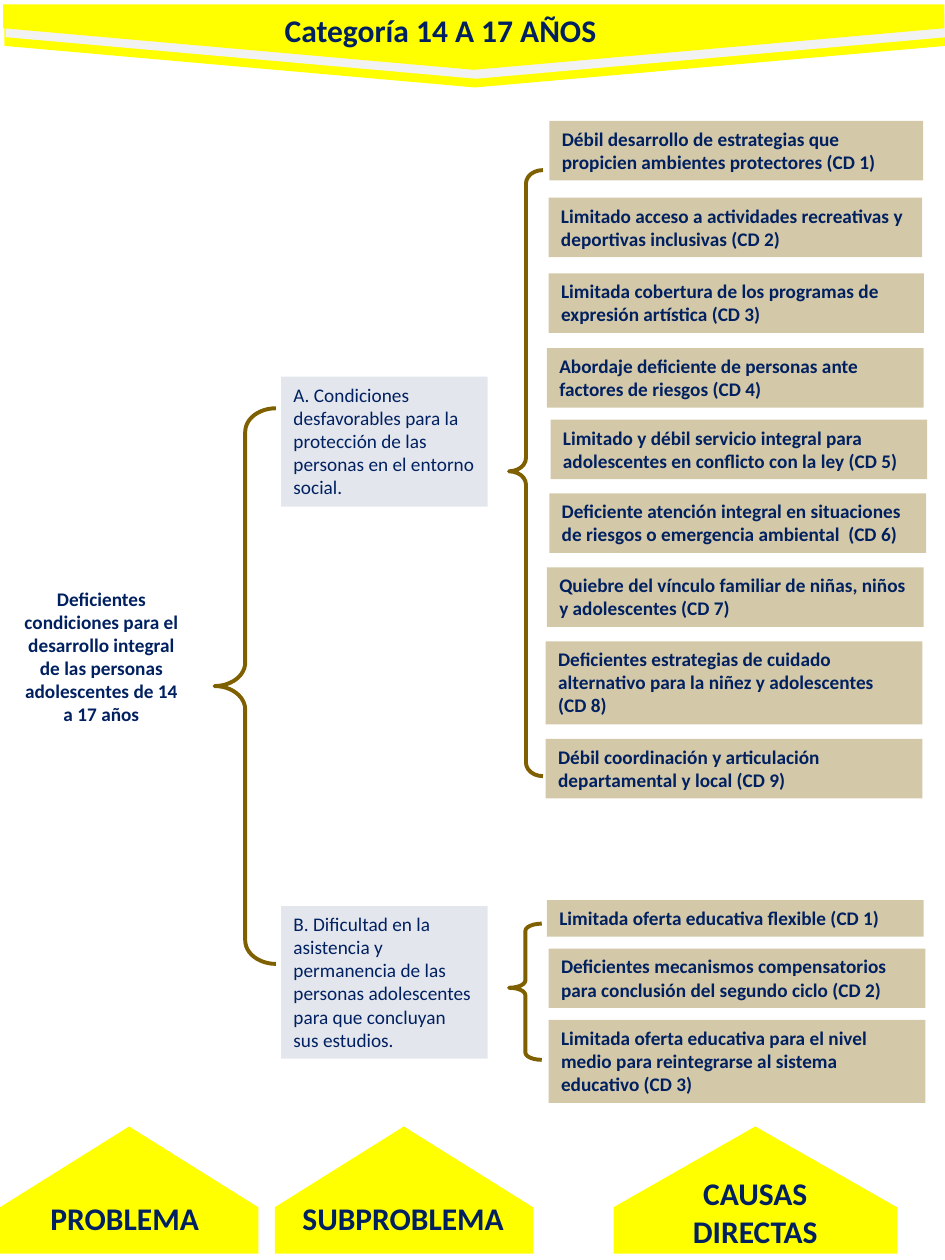
from lxml.etree import SubElement
from pptx import Presentation
from pptx.dml.color import RGBColor
from pptx.enum.shapes import MSO_SHAPE
from pptx.enum.text import MSO_ANCHOR, MSO_AUTO_SIZE, PP_ALIGN
from pptx.oxml.ns import qn
from pptx.util import Pt

COLORS = {"navy": "002060", "brown": "7F6000", "yellow": "FFFF00", "light": "F2F2F2"}

# left, top, width, height, text
CAUSES = [
    (314, 69.1, 213.5, 34, "Débil desarrollo de estrategias que propicien ambientes protectores (CD 1)"),
    (313.5, 113, 213.5, 34, "Limitado acceso a actividades recreativas y deportivas inclusivas (CD 2)"),
    (313.5, 156.2, 214.5, 34, "Limitada cobertura de los programas de expresión artística (CD 3)"),
    (312.5, 199, 215.3, 34, "Abordaje deficiente de personas ante factores de riesgos (CD 4)"),
    (314.6, 239.8, 215.3, 34, "Limitado y débil servicio integral para adolescentes en conflicto con la ley (CD 5)"),
    (313.9, 281.9, 215.3, 34, "Deficiente atención integral en situaciones de riesgos o emergencia ambiental  (CD 6)"),
    (312.5, 324.2, 215.3, 34, "Quiebre del vínculo familiar de niñas, niños y adolescentes (CD 7)"),
    (311.8, 366.5, 215.3, 47.5,
     "Deficientes estrategias de cuidado alternativo para la niñez y adolescentes\n(CD 8)"),
    (311.8, 422.2, 215.3, 34, "Débil coordinación y articulación departamental y local (CD 9)"),
    (312.5, 514.4, 215.3, 20.9, "Limitada oferta educativa flexible (CD 1)"),
    (313.5, 542, 215.3, 34, "Deficientes mecanismos compensatorios para conclusión del segundo ciclo (CD 2)"),
    (313.5, 582.8, 215.3, 47.5,
     "Limitada oferta educativa para el nivel medio para reintegrarse al sistema educativo (CD 3)"),
]

SUBPROBLEMS = [
    (160.6, 215.3, 118, 74.2,
     "A. Condiciones desfavorables para la protección de las personas en el entorno social."),
    (160.6, 517.8, 118, 87.2,
     "B. Dificultad en la asistencia y permanencia de las personas adolescentes "
     "para que concluyan sus estudios."),
]

# left, top, width, height, curve, point position
BRACES = [
    (290.9, 527.8, 18.7, 77.8, 0.224, 0.471),
    (290.9, 97.2, 19.4, 346.3, 0.394, 0.497),
    (122.6, 233.3, 35.1, 317.5, 0.383, 0.5),
]

BANNER = [(2.5, 12.6, "yellow"), (3.2, 7.6, "light"), (1.8, 2.5, "yellow")]

# arrow left, arrow width, label box, label
COLUMNS = [
    (0, 147.6, (10.1, 681.8, 122.4, 28.8), "PROBLEMA"),
    (157, 147.6, (161.3, 681.8, 138.2, 28.8), "SUBPROBLEMA"),
    (350.6, 162, (379.4, 667.4, 104.4, 51.1), "CAUSAS DIRECTAS"),
]


class ProblemTree:
    font = "Calibri"
    body_size = 11
    heading_size = 18

    def __init__(self, slide):
        self.slide = slide

    def color(self, name):
        return RGBColor.from_string(COLORS[name])

    def set_text(self, shape, text, size, bold=True, align=PP_ALIGN.LEFT):
        frame = shape.text_frame
        frame.word_wrap = True
        frame.auto_size = MSO_AUTO_SIZE.NONE
        frame.vertical_anchor = MSO_ANCHOR.TOP
        frame.text = text
        for paragraph in frame.paragraphs:
            paragraph.alignment = align
            paragraph.font.name = self.font
            paragraph.font.size = Pt(size)
            paragraph.font.bold = bold
            paragraph.font.color.rgb = self.color("navy")

    def title(self, left, top, width, height, text):
        """Place the title above everything drawn so far."""
        shape = self.slide.shapes.title
        shape.left, shape.top, shape.width, shape.height = map(Pt, (left, top, width, height))
        self.set_text(shape, text, self.heading_size)
        shape.element.getparent().append(shape.element)

    def label(self, left, top, width, height, text, size):
        shape = self.slide.shapes.add_textbox(Pt(left), Pt(top), Pt(width), Pt(height))
        self.set_text(shape, text, size, align=PP_ALIGN.CENTER)

    def shape(self, kind, left, top, width, height):
        shape = self.slide.shapes.add_shape(kind, Pt(left), Pt(top), Pt(width), Pt(height))
        shape.shadow.inherit = False
        return shape

    def fill(self, shape, color):
        shape.fill.solid()
        shape.fill.fore_color.rgb = self.color(color)
        shape.line.fill.background()

    def card(self, left, top, width, height, text, color, opacity, bold):
        shape = self.shape(MSO_SHAPE.RECTANGLE, left, top, width, height)
        self.fill(shape, color)
        tint = shape.element.spPr.find(qn("a:solidFill"))[0]
        SubElement(tint, qn("a:alpha"), val=str(opacity * 1000))
        self.set_text(shape, text, self.body_size, bold)

    def arrow(self, left, top, width, height, color, rotation):
        """Fit an upright or inverted arrow to the box it covers once turned."""
        shift = (width - height) / 2
        shape = self.shape(MSO_SHAPE.RIGHT_ARROW, left + shift, top - shift, height, width)
        shape.rotation = rotation
        shape.adjustments[0] = 1
        shape.adjustments[1] = 0.635
        self.fill(shape, color)

    def brace(self, left, top, width, height, curve, point):
        shape = self.shape(MSO_SHAPE.LEFT_BRACE, left, top, width, height)
        shape.adjustments[0] = curve
        shape.adjustments[1] = point
        shape.fill.background()
        shape.line.color.rgb = self.color("brown")
        shape.line.width = Pt(2.25)


def main():
    presentation = Presentation()
    presentation.slide_width = Pt(540)
    presentation.slide_height = Pt(720)
    tree = ProblemTree(presentation.slides.add_slide(presentation.slide_layouts[5]))

    for left, top, color in BANNER:
        tree.arrow(left, top, 537.8, 37.4, color, 90)
    tree.title(155.5, 2.9, 228.2, 28.8, "Categoría 14 A 17 AÑOS")

    tree.label(3.6, 331.9, 108.7, 87.1,
               "Deficientes condiciones para el desarrollo integral de las personas "
               "adolescentes de 14 a 17 años", tree.body_size)
    for subproblem in SUBPROBLEMS:
        tree.card(*subproblem, color="navy", opacity=11, bold=False)
    for cause in CAUSES:
        tree.card(*cause, color="brown", opacity=34, bold=True)
    for brace in BRACES:
        tree.brace(*brace)

    for left, width, box, text in COLUMNS:
        tree.arrow(left, 643.7, width, 72.7, "yellow", 270)
        tree.label(*box, text, tree.heading_size)

    presentation.save("out.pptx")


if __name__ == "__main__":
    main()
